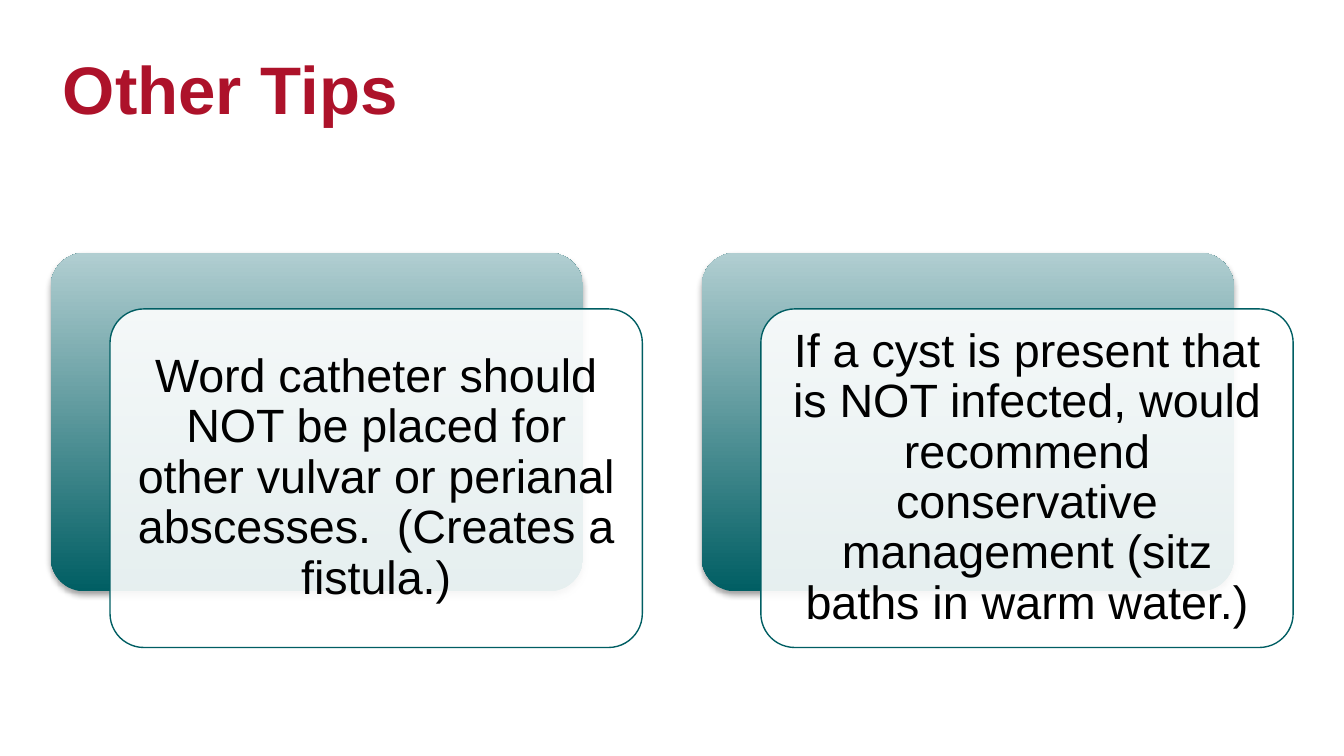
from dataclasses import dataclass

import lxml.etree
import pptx
import pptx.dml.color
import pptx.enum.shapes
import pptx.enum.text
import pptx.oxml
import pptx.oxml.ns
import pptx.util
from pptx.util import Cm

COLORS = {
    "title": "AD122A",
    "teal": "005E63",
    "pale_teal": "B1CED1",
    "card": "FFFFFF",
    "text": "000000",
    "shadow": "000000",
}
FONT = "Arial"
CARD_WIDTH, CARD_HEIGHT = 10.06, 6.4
CARD_LEFT, CARD_TOP = 0.96, 4.78
CARD_PITCH = 12.3
FRONT_SHIFT_X, FRONT_SHIFT_Y = 1.12, 1.06


@dataclass
class Tip:
    text: str


TIPS = [
    Tip("Word catheter should NOT be placed for other vulvar or perianal abscesses.  (Creates a fistula.)"),
    Tip("If a cyst is present that is NOT infected, would recommend conservative management (sitz baths in warm water.)"),
]


def color(name: str) -> pptx.dml.color.RGBColor:
    return pptx.dml.color.RGBColor.from_string(COLORS[name])


def write_text(shape, text: str, *, size: float, color_name: str, align, bold: bool = False, inset_y: float = 0) -> None:
    frame = shape.text_frame
    frame.word_wrap = True
    frame.auto_size = pptx.enum.text.MSO_AUTO_SIZE.NONE
    frame.vertical_anchor = pptx.enum.text.MSO_ANCHOR.MIDDLE
    frame.margin_left = frame.margin_right = Cm(0.25)
    frame.margin_top = frame.margin_bottom = Cm(inset_y)
    para = frame.paragraphs[0]
    para.alignment = align
    para.line_spacing = 0.9
    span = para.add_run()
    span.text = text
    span.font.name = FONT
    span.font.size = pptx.util.Pt(size)
    span.font.bold = bold
    span.font.color.rgb = color(color_name)


def add_card(page, left: float, top: float):
    card = page.shapes.add_shape(
        pptx.enum.shapes.MSO_SHAPE.ROUNDED_RECTANGLE,
        Cm(left), Cm(top), Cm(CARD_WIDTH), Cm(CARD_HEIGHT),
    )
    card.adjustments[0] = 0.1
    card.shadow.inherit = False
    return card


def add_shadow(shape) -> None:
    effects = shape._element.spPr.find(pptx.oxml.ns.qn("a:effectLst"))
    effects.append(pptx.oxml.parse_xml(
        f'<a:outerShdw {pptx.oxml.ns.nsdecls("a")} blurRad="{pptx.util.Pt(3.1)}" '
        f'dist="{pptx.util.Pt(1.8)}" dir="5400000" rotWithShape="0">'
        f'<a:srgbClr val="{COLORS["shadow"]}"><a:alpha val="35000"/></a:srgbClr></a:outerShdw>'
    ))


def set_opacity(shape, percent: int) -> None:
    fill_color = shape._element.spPr.find(pptx.oxml.ns.qn("a:solidFill"))[0]
    alpha = lxml.etree.SubElement(fill_color, pptx.oxml.ns.qn("a:alpha"))
    alpha.set("val", str(percent * 1000))


def add_tip(page, tip: Tip, left: float, top: float) -> None:
    back = add_card(page, left, top)
    back.fill.gradient()
    back.fill.gradient_angle = 90
    for stop, name in zip(back.fill.gradient_stops, ("teal", "pale_teal")):
        stop.color.rgb = color(name)
    back.line.fill.background()
    add_shadow(back)

    front = add_card(page, left + FRONT_SHIFT_X, top + FRONT_SHIFT_Y)
    front.fill.solid()
    front.fill.fore_color.rgb = color("card")
    set_opacity(front, 90)
    front.line.color.rgb = color("teal")
    front.line.width = pptx.util.Pt(0.75)
    write_text(front, tip.text, size=25, color_name="text",
               align=pptx.enum.text.PP_ALIGN.CENTER, inset_y=0.25)


def main() -> None:
    deck = pptx.Presentation()
    deck.slide_width, deck.slide_height = Cm(25.4), Cm(14.29)
    page = deck.slides.add_slide(deck.slide_layouts[5])

    title = page.shapes.title
    title.left, title.top, title.width, title.height = Cm(0.94), Cm(0.46), Cm(21.92), Cm(2.57)
    write_text(title, "Other Tips", size=36, color_name="title",
               align=pptx.enum.text.PP_ALIGN.LEFT, bold=True)

    for index, tip in enumerate(TIPS):
        add_tip(page, tip, CARD_LEFT + index * CARD_PITCH, CARD_TOP)

    deck.save("out.pptx")


if __name__ == "__main__":
    main()
